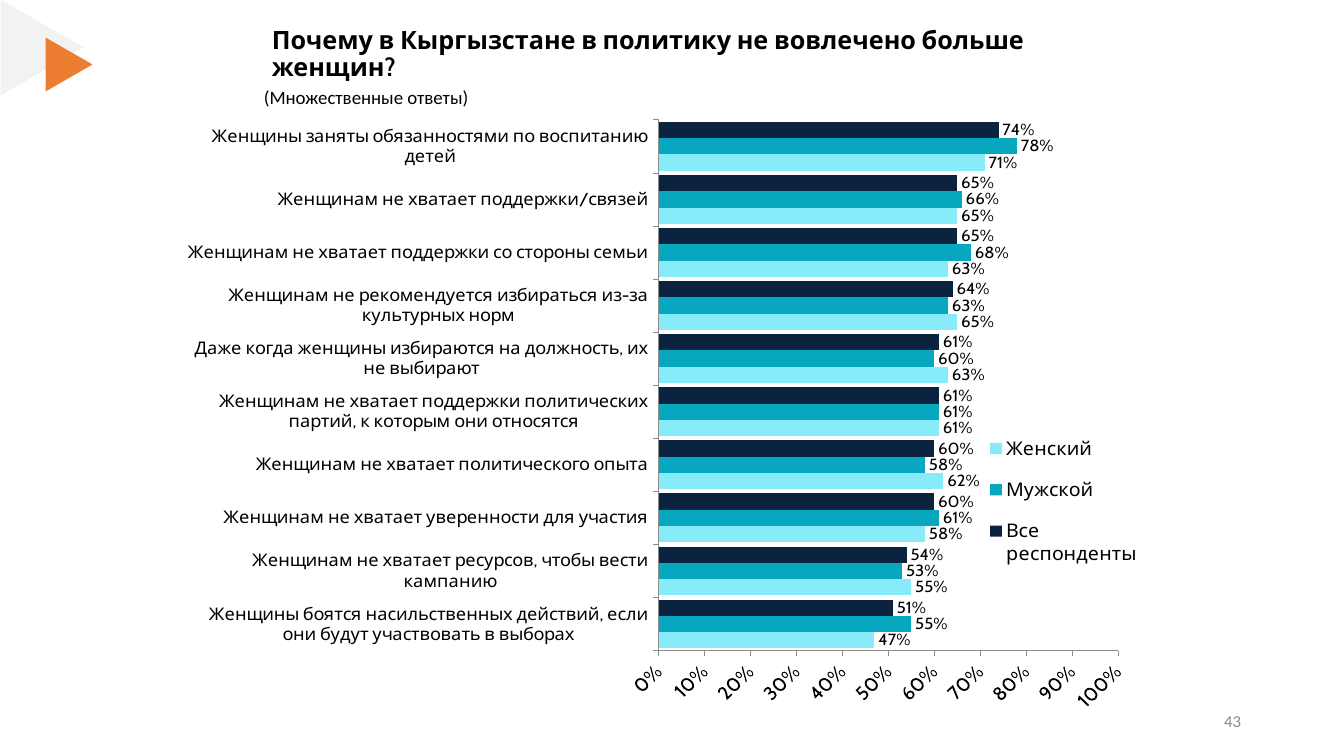
from dataclasses import dataclass

import pptx
import pptx.chart.data
import pptx.dml.color
import pptx.enum.chart
import pptx.enum.shapes
import pptx.enum.text
import pptx.oxml
import pptx.oxml.ns
import pptx.util

SLIDE_W, SLIDE_H = 1344, 756
SCALE = 12192000 / SLIDE_W


@dataclass(frozen=True)
class Theme:
    heading: str = "Cabin"
    body: str = "Calibri"
    black: str = "000000"
    gray: str = "8C8C8C"
    pale: str = "F2F2F2"
    orange: str = "ED7D31"
    navy: str = "0C2340"
    teal: str = "08A7C0"
    aqua: str = "88EBFA"
    title_size: float = 18
    subtitle_size: float = 13.5
    number_size: float = 12
    label_size: float = 12
    category_size: float = 13
    axis_size: float = 14


THEME = Theme()

REASONS = [
    ("Женщины заняты обязанностями по воспитанию детей", 0.74, 0.78, 0.71),
    ("Женщинам не хватает поддержки/связей", 0.65, 0.66, 0.65),
    ("Женщинам не хватает поддержки со стороны семьи", 0.65, 0.68, 0.63),
    ("Женщинам не рекомендуется избираться из-за культурных норм", 0.64, 0.63, 0.65),
    ("Даже когда женщины избираются на должность, их не выбирают", 0.61, 0.60, 0.63),
    ("Женщинам не хватает поддержки политических партий, к которым они относятся",
     0.61, 0.61, 0.61),
    ("Женщинам не хватает политического опыта", 0.60, 0.58, 0.62),
    ("Женщинам не хватает уверенности для участия", 0.60, 0.61, 0.58),
    ("Женщинам не хватает ресурсов, чтобы вести кампанию", 0.54, 0.53, 0.55),
    ("Женщины боятся насильственных действий, если они будут участвовать в выборах",
     0.51, 0.55, 0.47),
]
GROUPS = [
    ("Все респонденты", THEME.navy),
    ("Мужской", THEME.teal),
    ("Женский", THEME.aqua),
]


def px(*lengths):
    return [round(n * SCALE) for n in lengths]


def rgb(color):
    return pptx.dml.color.RGBColor.from_string(color)


def set_font(font, name, size, color=THEME.black, bold=False):
    font.name = name
    font.size = pptx.util.Pt(size)
    font.bold = bold
    font.color.rgb = rgb(color)


def add_triangle(slide, box, color):
    kind = pptx.enum.shapes.MSO_SHAPE.ISOSCELES_TRIANGLE
    sp = slide.shapes.add_shape(kind, *px(*box))
    sp.rotation = 90
    sp.shadow.inherit = False
    sp.fill.solid()
    sp.fill.fore_color.rgb = rgb(color)
    sp.line.fill.background()


def add_text(slide, box, text, name, size, color=THEME.black, bold=False,
             align=pptx.enum.text.PP_ALIGN.LEFT, spacing=0.9):
    tf = slide.shapes.add_textbox(*px(*box)).text_frame
    tf.word_wrap = True
    tf.vertical_anchor = pptx.enum.text.MSO_ANCHOR.MIDDLE
    p = tf.paragraphs[0]
    p.text = text
    p.alignment = align
    p.line_spacing = spacing
    set_font(p.font, name, size, color, bold)


def set_layout(element, index, x, y, w, h, inner=False):
    old = element.find(pptx.oxml.ns.qn("c:layout"))
    if old is not None:
        element.remove(old)
    target = '<c:layoutTarget val="inner"/>' if inner else ""
    modes = "".join(f'<c:{k}Mode val="edge"/>' for k in "xy")
    sides = "".join(f'<c:{k} val="{v}"/>' for k, v in zip("xywh", (x, y, w, h)))
    ns = pptx.oxml.ns.nsdecls("c")
    element.insert(index, pptx.oxml.parse_xml(
        f"<c:layout {ns}><c:manualLayout>{target}{modes}{sides}"
        "</c:manualLayout></c:layout>"))


def style_axis(axis, size, crosses):
    axis.has_major_gridlines = False
    axis.major_tick_mark = pptx.enum.chart.XL_TICK_MARK.OUTSIDE
    axis.minor_tick_mark = pptx.enum.chart.XL_TICK_MARK.NONE
    axis.format.line.color.rgb = rgb(THEME.gray)
    axis.format.line.width = pptx.util.Pt(0.5)
    set_font(axis.tick_labels.font, THEME.heading, size)
    axis._element.find(pptx.oxml.ns.qn("c:crosses")).set("val", crosses)


def style_series(series, color):
    series.format.fill.solid()
    series.format.fill.fore_color.rgb = rgb(color)
    series.invert_if_negative = False
    labels = series.data_labels
    labels.show_value = True
    labels.position = pptx.enum.chart.XL_LABEL_POSITION.OUTSIDE_END
    labels.number_format = "0%"
    labels.number_format_is_linked = False
    set_font(labels.font, THEME.heading, THEME.label_size)


def add_reasons_chart(slide, box):
    names, *columns = zip(*REASONS)
    data = pptx.chart.data.CategoryChartData(number_format="0%")
    data.categories = names
    for (group, _), values in zip(GROUPS, columns):
        data.add_series(group, values)
    kind = pptx.enum.chart.XL_CHART_TYPE.BAR_CLUSTERED
    chart = slide.shapes.add_chart(kind, *px(*box), data).chart
    chart.has_title = False
    set_font(chart.font, THEME.heading, THEME.label_size)

    plot = chart.plots[0]
    plot.gap_width = 26
    plot.vary_by_categories = False
    for series, (_, color) in zip(plot.series, GROUPS):
        style_series(series, color)

    reasons, share = chart.category_axis, chart.value_axis
    style_axis(reasons, THEME.category_size, "autoZero")
    reasons.reverse_order = True
    style_axis(share, THEME.axis_size, "max")
    share.tick_label_position = pptx.enum.chart.XL_TICK_LABEL_POSITION.HIGH
    share.minimum_scale, share.maximum_scale, share.major_unit = 0, 1, 0.1
    share.tick_labels.number_format = "0%"
    share.tick_labels.number_format_is_linked = False
    share._element.txPr.bodyPr.set("rot", "-2700000")

    chart.has_legend = True
    legend = chart.legend
    legend.position = pptx.enum.chart.XL_LEGEND_POSITION.RIGHT
    legend.include_in_layout = False
    set_font(legend.font, THEME.heading, THEME.axis_size)
    set_layout(legend._element, 1, 0.84, 0.53, 0.16, 0.29)
    set_layout(chart._chartSpace.chart.plotArea, 0, 0.493, 0.005, 0.476, 0.932, inner=True)


def main():
    prs = pptx.Presentation()
    prs.slide_width, prs.slide_height = px(SLIDE_W, SLIDE_H)
    slide = prs.slides.add_slide(prs.slide_layouts[6])
    add_triangle(slide, (-6, 6, 96, 83), THEME.pale)
    add_triangle(slide, (42, 41, 54, 47), THEME.orange)
    add_text(slide, (262, 15, 860, 79),
             "Почему в Кыргызстане в политику не вовлечено больше женщин?",
             THEME.heading, THEME.title_size, bold=True)
    add_text(slide, (949, 701, 302, 40), "43", THEME.body, THEME.number_size,
             THEME.gray, align=pptx.enum.text.PP_ALIGN.RIGHT, spacing=1.0)
    add_text(slide, (254, 79, 853, 38), "(Множественные ответы)",
             THEME.body, THEME.subtitle_size)
    add_reasons_chart(slide, (183, 117, 965, 595))
    prs.save("out.pptx")


if __name__ == "__main__":
    main()
